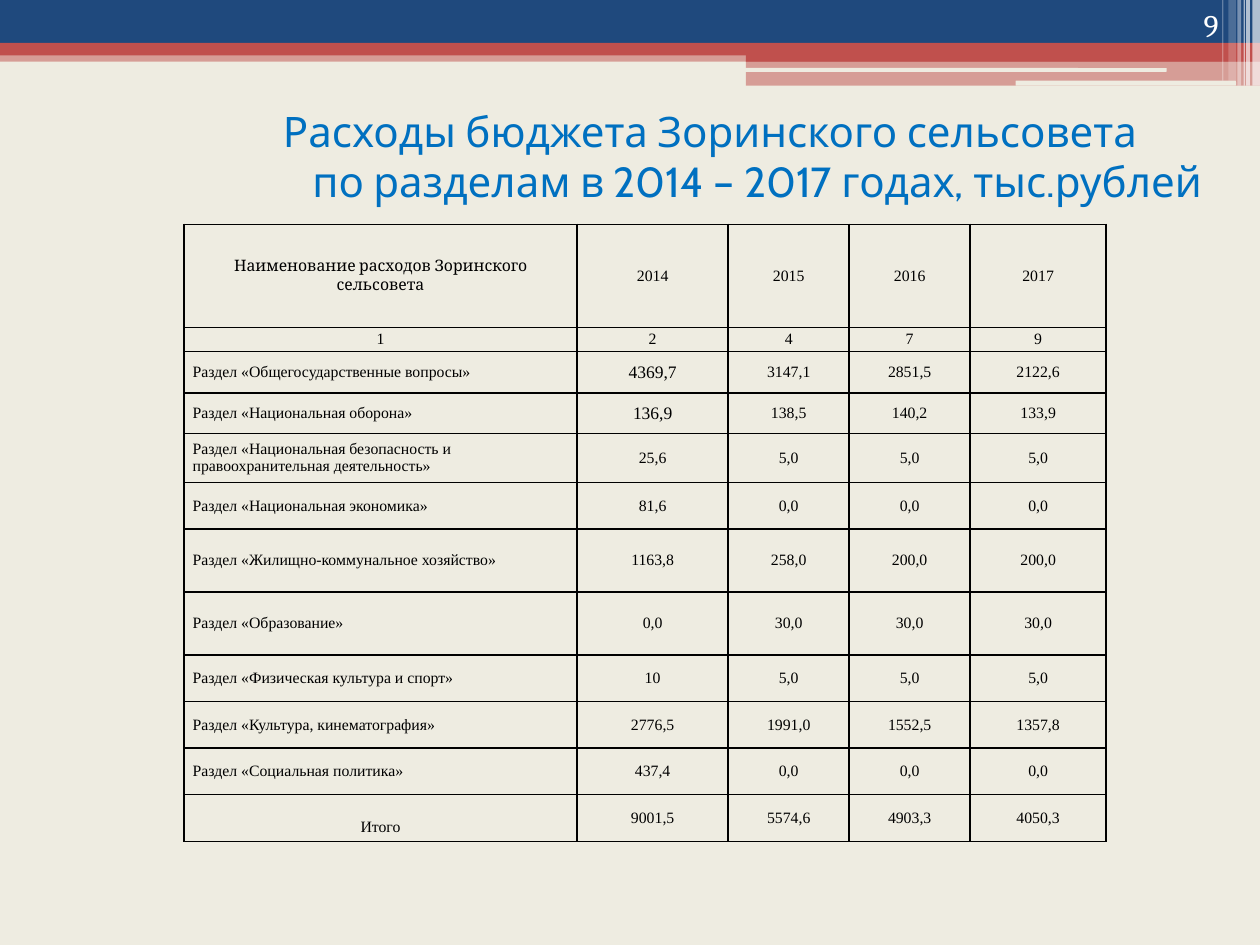
from dataclasses import dataclass

from lxml.etree import SubElement
from pptx import Presentation
from pptx.dml.color import RGBColor
from pptx.enum.shapes import MSO_SHAPE
from pptx.enum.text import MSO_ANCHOR, PP_ALIGN
from pptx.oxml.ns import qn
from pptx.util import Inches, Pt


@dataclass(frozen=True)
class Theme:
    background: str = "EEECE1"
    navy: str = "1F497D"
    red: str = "C0504D"
    white: str = "FFFFFF"
    black: str = "000000"
    title_blue: str = "0070C0"
    title_font: str = "Cabin"
    heading_font: str = "Cambria"
    table_font: str = "Times New Roman"
    title_size: float = 24
    number_size: float = 18
    table_size: float = 9
    large_table_size: float = 10
    border_width: float = 1


THEME = Theme()

# Each title line with the left indent that pushes it off centre
TITLE_LINES = [
    ("Расходы бюджета Зоринского сельсовета", 1.27),
    ("по разделам в 2014 – 2017 годах, тыс.рублей", 2.02),
]
COLUMN_WIDTHS = [3.12, 1.2, 0.96, 0.96, 1.08]
ROW_HEIGHTS = [0.82, 0.19, 0.33, 0.32, 0.39, 0.37, 0.5, 0.5, 0.37, 0.37, 0.37, 0.37]
EXPENSES = [
    ("Наименование расходов Зоринского сельсовета", "2014", "2015", "2016", "2017"),
    ("1", "2", "4", "7", "9"),
    ("Раздел «Общегосударственные вопросы»", "4369,7", "3147,1", "2851,5", "2122,6"),
    ("Раздел «Национальная оборона»", "136,9", "138,5", "140,2", "133,9"),
    ("Раздел «Национальная безопасность и правоохранительная деятельность»",
     "25,6", "5,0", "5,0", "5,0"),
    ("Раздел «Национальная экономика»", "81,6", "0,0", "0,0", "0,0"),
    ("Раздел «Жилищно-коммунальное хозяйство»", "1163,8", "258,0", "200,0", "200,0"),
    ("Раздел «Образование»", "0,0", "30,0", "30,0", "30,0"),
    ("Раздел «Физическая культура и спорт»", "10", "5,0", "5,0", "5,0"),
    ("Раздел «Культура, кинематография»", "2776,5", "1991,0", "1552,5", "1357,8"),
    ("Раздел «Социальная политика»", "437,4", "0,0", "0,0", "0,0"),
    ("Итого", "9001,5", "5574,6", "4903,3", "4050,3"),
]
LARGE_CELLS = {(2, 1), (3, 1)}


def write(paragraph, text, *, font, size, color, align=PP_ALIGN.CENTER, indent=0):
    paragraph.alignment = align
    if indent:
        paragraph._p.get_or_add_pPr().set("marL", str(Inches(indent)))
    run = paragraph.add_run()
    run.text = text
    run.font.name = font
    run.font.size = Pt(size)
    run.font.color.rgb = RGBColor.from_string(color)


def add_bar(slide, box, color, opacity=100, kind=MSO_SHAPE.RECTANGLE):
    bar = slide.shapes.add_shape(kind, *map(Inches, box))
    bar.shadow.inherit = False
    bar.line.fill.background()
    bar.fill.solid()
    bar.fill.fore_color.rgb = RGBColor.from_string(color)
    if opacity < 100:
        tint = bar.fill._xPr.find(qn("a:solidFill"))[0]
        SubElement(tint, qn("a:alpha"), val=str(opacity * 1000))


def add_header(slide, left, top, width):
    """Draw the layered bands and the fading stripes at their right end."""
    right = left + width
    step = left + 5.92
    for x, y, height, color, opacity in [
        (left, 0.4, 0.09, THEME.red, 50),
        (left, 0, 0.34, THEME.navy, 100),
        (left, 0.34, 0.1, THEME.red, 100),
        (step, 0.39, 0.1, THEME.red, 100),
        (step, 0.48, 0.2, THEME.red, 50),
    ]:
        add_bar(slide, (x, top + y, right - x, height), color, opacity)
    for x, y, length, height in [(5.91, 0.54, 3.35, 0.03), (8.06, 0.64, 1.75, 0.04)]:
        add_bar(slide, (left + x, top + y, length, height), THEME.background,
                kind=MSO_SHAPE.ROUNDED_RECTANGLE)
    for from_right, stripe, height, opacity in [
        (0.06, 0.06, 0.68, 65),
        (0.11, 0.03, 0.68, 65),
        (0.13, 0.01, 0.68, 60),
        (0.18, 0.03, 0.68, 40),
        (0.25, 0.06, 0.64, 20),
        (0.3, 0.01, 0.64, 30),
    ]:
        add_bar(slide, (right - from_right, top, stripe, height), THEME.white, opacity)


def add_title(slide, left, top, width, height):
    title = slide.shapes.title
    title.left, title.top, title.width, title.height = map(
        Inches, (left, top, width, height))
    frame = title.text_frame
    frame.word_wrap = True
    frame.vertical_anchor = MSO_ANCHOR.MIDDLE
    for position, (line, indent) in enumerate(TITLE_LINES):
        paragraph = frame.add_paragraph() if position else frame.paragraphs[0]
        paragraph.space_before = Pt(0)
        write(paragraph, line, font=THEME.title_font, size=THEME.title_size,
              color=THEME.title_blue, indent=indent)


def add_page_number(slide, left, top, width, height):
    frame = slide.shapes.add_textbox(
        *map(Inches, (left, top, width, height))).text_frame
    frame.word_wrap = True
    frame.vertical_anchor = MSO_ANCHOR.BOTTOM
    write(frame.paragraphs[0], "9", font=THEME.heading_font, size=THEME.number_size,
          color=THEME.white, align=PP_ALIGN.RIGHT)


def format_cell(cell):
    """Set a transparent fill, thin margins and a border on all four sides."""
    cell.vertical_anchor = MSO_ANCHOR.MIDDLE
    cell.margin_left = cell.margin_right = Inches(0.07)
    cell.margin_top = cell.margin_bottom = 0
    properties = cell._tc.get_or_add_tcPr()
    for side in ("a:lnL", "a:lnR", "a:lnT", "a:lnB"):
        border = SubElement(properties, qn(side), w=str(Pt(THEME.border_width)))
        SubElement(SubElement(border, qn("a:solidFill")), qn("a:srgbClr"),
                   val=THEME.black)
    cell.fill.background()


def add_expense_table(slide, left, top):
    table = slide.shapes.add_table(
        len(ROW_HEIGHTS), len(COLUMN_WIDTHS), Inches(left), Inches(top),
        Inches(sum(COLUMN_WIDTHS)), Inches(sum(ROW_HEIGHTS))).table
    table.first_row = table.horz_banding = False
    for column, width in zip(table.columns, COLUMN_WIDTHS):
        column.width = Inches(width)
    for row, height in zip(table.rows, ROW_HEIGHTS):
        row.height = Inches(height)

    total_row = len(EXPENSES) - 1
    for row, values in enumerate(EXPENSES):
        for column, value in enumerate(values):
            cell = table.cell(row, column)
            format_cell(cell)
            is_section = column == 0 and 2 <= row < total_row
            write(cell.text_frame.paragraphs[0], value,
                  font=THEME.heading_font if row == column == 0 else THEME.table_font,
                  size=(THEME.large_table_size if (row, column) in LARGE_CELLS
                        else THEME.table_size),
                  color=THEME.black,
                  align=PP_ALIGN.LEFT if is_section else PP_ALIGN.CENTER)

    heading = table.cell(0, 0)
    heading.margin_left = heading.margin_right = Inches(0.2)
    table.cell(total_row, 0).margin_top = Inches(0.15)


def main():
    deck = Presentation()
    deck.slide_width, deck.slide_height = Inches(10), Inches(7.5)
    slide = deck.slides.add_slide(deck.slide_layouts[5])
    slide.background.fill.solid()
    slide.background.fill.fore_color.rgb = RGBColor.from_string(THEME.background)
    add_header(slide, 0, 0, 10)
    add_title(slide, 0, 0.84, 10, 0.79)
    add_page_number(slide, 8.94, 0, 0.83, 0.4)
    add_expense_table(slide, 1.46, 1.78)
    deck.save("out.pptx")


if __name__ == "__main__":
    main()
